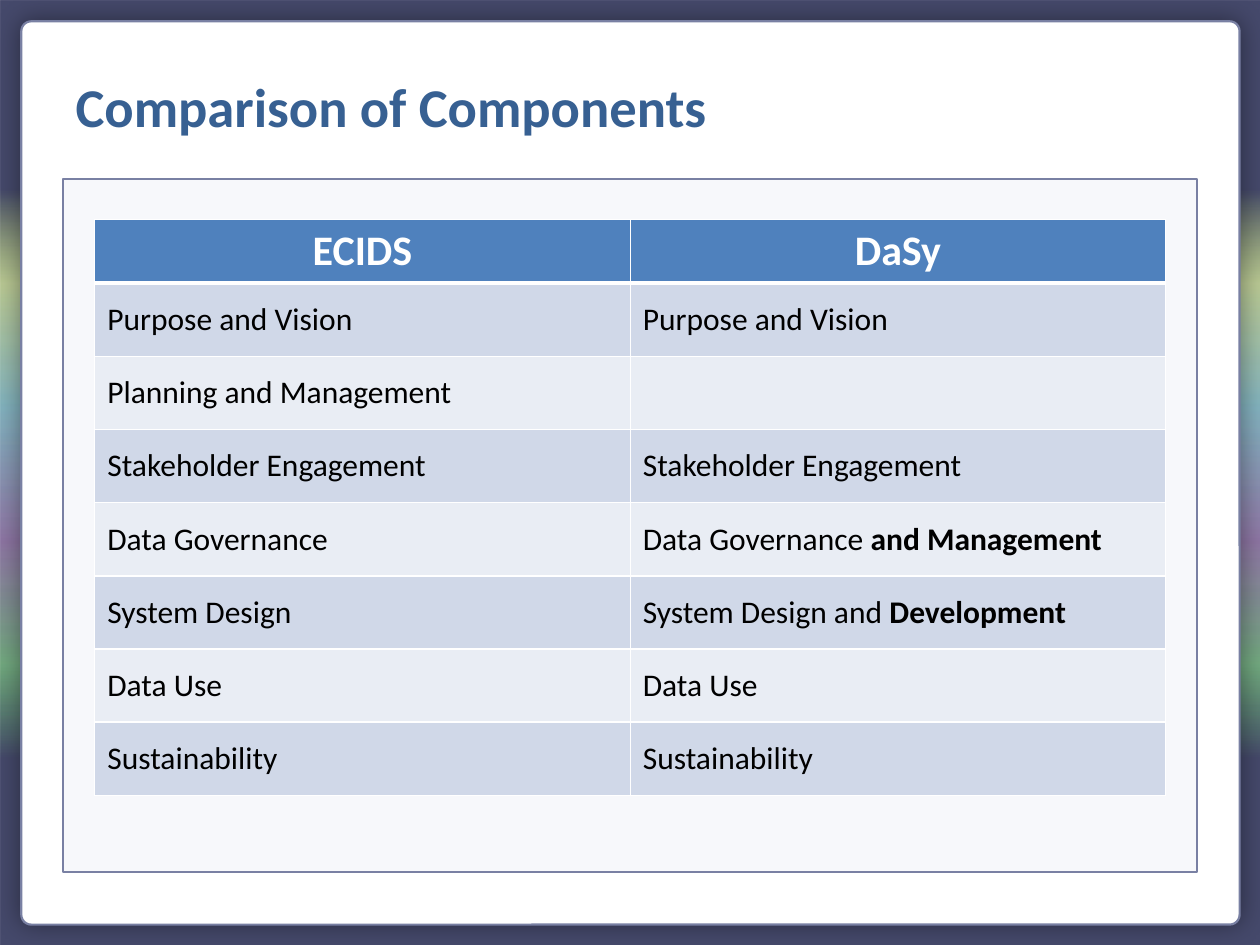
"""Build a slide that compares the components of two frameworks in a table."""
import lxml.etree
import pptx
import pptx.dml.color
import pptx.enum.shapes
import pptx.enum.text
import pptx.oxml
import pptx.oxml.ns
import pptx.util

Cm = pptx.util.Cm
Pt = pptx.util.Pt
SHAPES = pptx.enum.shapes.MSO_SHAPE
ALIGN = pptx.enum.text.PP_ALIGN
MIDDLE = pptx.enum.text.MSO_ANCHOR.MIDDLE

TITLE = "Comparison of Components"
HEADERS = ("ECIDS", "DaSy")
ROWS = [
    ("Purpose and Vision", "Purpose and Vision"),
    ("Planning and Management", ""),
    ("Stakeholder Engagement", "Stakeholder Engagement"),
    ("Data Governance", ("Data Governance ", "and Management")),
    ("System Design", ("System Design and ", "Development")),
    ("Data Use", "Data Use"),
    ("Sustainability", "Sustainability"),
]

THEME = {
    "font": "Calibri",
    "title": "376092", "title_size": 31.2,
    "header": "4F81BD", "header_text": "FFFFFF", "header_size": 24,
    "bands": ("D0D8E8", "E9EDF4"), "text": "000000", "text_size": 18,
    "page": "FFFFFF", "panel": "F7F8FB", "outline": "7980A3", "rule": "FFFFFF",
    "backdrop": [(20, "45496B", 100), (30, "839F3F", 55), (43, "328196", 60),
                 (57, "542E75", 65), (70, "37864A", 70), (80, "45496B", 100)],
}

FRAMES = {
    "backdrop": (0, 0, 25.4, 19.1),
    "page": (0.43, 0.43, 24.56, 18.21),
    "panel": (1.27, 3.61, 22.86, 13.97),
    "title": (1.27, 1.07, 21.79, 2.11),
    "table": (1.91, 4.42, 21.59, 11.58),
}
HEADER_HEIGHT = 1.25


def place(name):
    """Return a frame as lengths."""
    return [Cm(value) for value in FRAMES[name]]


def colour(value):
    """Return a colour from its hex value."""
    return pptx.dml.color.RGBColor.from_string(value)


def drawing(markup):
    """Parse a DrawingML fragment whose root element has no attributes yet."""
    head, tail = markup.split(">", 1)
    slash = "/" if head.endswith("/") else ""
    return pptx.oxml.parse_xml(
        f"{head.rstrip('/')} {pptx.oxml.ns.nsdecls('a')}{slash}>{tail}")


def write(frame, content, size, tint, bold=False, align=ALIGN.LEFT):
    """Write plain text, or a pair whose second part is bold."""
    para = frame.paragraphs[0]
    para.alignment = align
    parts = (content,) if isinstance(content, str) else content
    for index, part in enumerate(parts):
        span = para.add_run()
        span.text = part
        span.font.name = THEME["font"]
        span.font.size = Pt(size)
        span.font.bold = bold or index > 0
        span.font.color.rgb = colour(tint)


def add_box(page, name, kind=SHAPES.RECTANGLE):
    """Add a filled and outlined box of the page frame."""
    box = page.shapes.add_shape(kind, *place(name))
    box.shadow.inherit = False
    box.fill.solid()
    box.fill.fore_color.rgb = colour(THEME[name])
    box.line.color.rgb = colour(THEME["outline"])
    box.line.width = Pt(1.25)
    return box


def add_backdrop(page):
    """Add the band of vertical gradient colours."""
    box = page.shapes.add_shape(SHAPES.RECTANGLE, *place("backdrop"))
    box.shadow.inherit = False
    box.line.fill.background()
    stops = "".join(
        f'<a:gs pos="{stop * 1000}"><a:srgbClr val="{tint}">'
        f'<a:alpha val="{alpha * 1000}"/></a:srgbClr></a:gs>'
        for stop, tint, alpha in THEME["backdrop"])
    gradient = drawing(f"<a:gradFill><a:gsLst>{stops}</a:gsLst>"
                       '<a:lin ang="5400000" scaled="0"/></a:gradFill>')
    box.element.spPr.find(pptx.oxml.ns.qn("a:prstGeom")).addnext(gradient)


def add_page_card(page):
    """Add the rounded card with a soft shadow."""
    card = add_box(page, "page", SHAPES.ROUNDED_RECTANGLE)
    card.adjustments[0] = 0.011
    effects = card.element.spPr.find(pptx.oxml.ns.qn("a:effectLst"))
    shadow = drawing('<a:outerShdw><a:srgbClr val="000000">'
                     '<a:alpha val="40000"/></a:srgbClr></a:outerShdw>')
    shadow.set("blurRad", str(Pt(15)))
    effects.append(shadow)


def style_cell(cell, fill, bottom):
    """Fill a cell and rule its four sides."""
    cell.vertical_anchor = MIDDLE
    cell.fill.solid()
    cell.fill.fore_color.rgb = colour(fill)
    properties = cell._tc.get_or_add_tcPr()
    for index, side in enumerate("LRTB"):
        rule = drawing(f'<a:ln{side}><a:solidFill><a:srgbClr val="{THEME["rule"]}"/>'
                       f"</a:solidFill></a:ln{side}>")
        rule.set("w", str(Pt(bottom if side == "B" else 1)))
        properties.insert(index, rule)


def add_comparison(page):
    """Add the table with its header and banded rows."""
    table = page.shapes.add_table(len(ROWS) + 1, len(HEADERS), *place("table")).table
    table.horz_banding = False
    row_height = (FRAMES["table"][3] - HEADER_HEIGHT) / len(ROWS)
    for index, row in enumerate(table.rows):
        row.height = Cm(row_height if index else HEADER_HEIGHT)
    for column, header in enumerate(HEADERS):
        cell = table.cell(0, column)
        style_cell(cell, THEME["header"], bottom=3)
        write(cell.text_frame, header, THEME["header_size"], THEME["header_text"],
              bold=True, align=ALIGN.CENTER)
    for index, row in enumerate(ROWS):
        for column, content in enumerate(row):
            cell = table.cell(index + 1, column)
            style_cell(cell, THEME["bands"][index % 2], bottom=1)
            if content:
                write(cell.text_frame, content, THEME["text_size"], THEME["text"])


def add_title(page):
    """Format the title placeholder and bring it in front of the boxes."""
    title = page.shapes.title
    title.left, title.top, title.width, title.height = place("title")
    title.text_frame.word_wrap = True
    title.text_frame.auto_size = pptx.enum.text.MSO_AUTO_SIZE.NONE
    title.text_frame.vertical_anchor = MIDDLE
    write(title.text_frame, TITLE, THEME["title_size"], THEME["title"], bold=True)
    page.shapes.element.append(title.element)


def main():
    """Build and save the deck."""
    deck = pptx.Presentation()
    deck.slide_width, deck.slide_height = Cm(25.4), Cm(19.05)
    page = deck.slides.add_slide(deck.slide_layouts.get_by_name("Title Only"))
    add_backdrop(page)
    add_page_card(page)
    add_box(page, "panel")
    add_title(page)
    add_comparison(page)
    deck.save("out.pptx")


if __name__ == "__main__":
    main()
